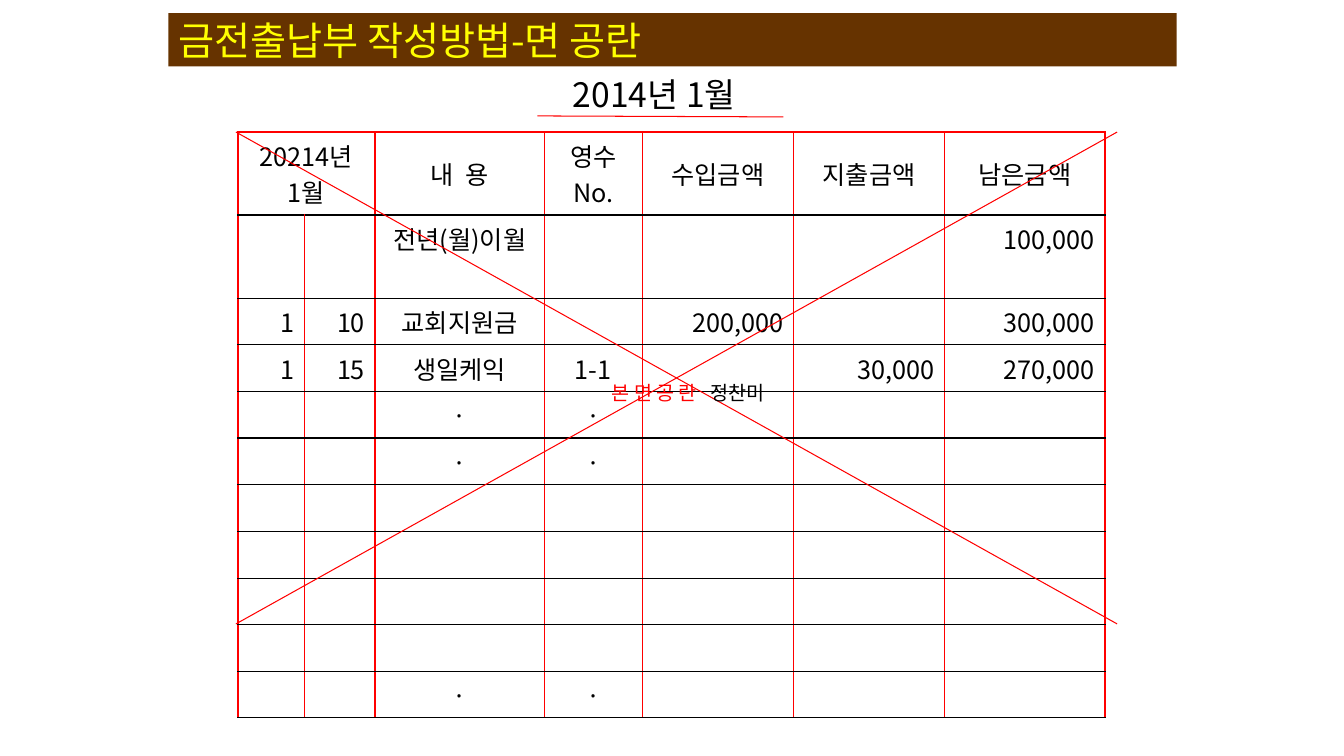
"""Build a cash book slide whose unused page is crossed out."""
import pptx
import pptx.util
import pptx.dml.color
import pptx.enum.shapes
import pptx.enum.text
import pptx.oxml.ns
import lxml.etree

FONT = "Noto Sans CJK KR"
COLORS = {"brown": "663300", "yellow": "FFFF00", "red": "FF0000", "black": "000000"}
TITLE = "금전출납부 작성방법-면 공란"
MONTH = "2014년 1월"
BLANK_NOTE = [("본 면 공 란   ", "red"), ("정찬미", "black")]
EMPTY = [""] * 7
DOTS = ["", "", "·", "·", "", "", ""]
LEDGER = [
    ["20214년\n1월", "", "내  용", "영수\nNo.", "수입금액", "지출금액", "남은금액"],
    ["", "", "전년(월)이월", "", "", "", "100,000"],
    ["1", "10", "교회지원금", "", "200,000", "", "300,000"],
    ["1", "15", "생일케익", "1-1", "", "30,000", "270,000"],
    DOTS, DOTS, EMPTY, EMPTY, EMPTY, EMPTY, DOTS,
]
COLUMNS = [0.66, 0.7, 1.68, 0.97, 1.5, 1.5, 1.59]
ROWS = [0.46] + [0.42] * 10
CENTERED = (2, 3)
LAST_BOLD_ROW = 5
TABLE_BOX = (2.36, 1.31, 8.62, 4.89)
LEFT, TOP, RIGHT, BOTTOM = 2.34, 1.31, 11.08, 6.19
LINES = [
    (5.33, 1.15, 7.77, 1.16),
    (LEFT, TOP, RIGHT, BOTTOM),
    (RIGHT, TOP, LEFT, BOTTOM),
]
ALIGN = pptx.enum.text.PP_ALIGN
MIDDLE = pptx.enum.text.MSO_ANCHOR.MIDDLE
qn = pptx.oxml.ns.qn


def inches(values):
    return [pptx.util.Inches(value) for value in values]


def rgb(color):
    return pptx.dml.color.RGBColor.from_string(COLORS[color])


def set_font(font, element, size, color):
    font.size = pptx.util.Pt(size)
    font.name = FONT
    font.color.rgb = rgb(color)
    latin = element.find(qn("a:latin"))
    east_asian = latin.makeelement(qn("a:ea"), {"typeface": FONT})
    latin.addnext(east_asian)


def format_para(para, size, color, align):
    para.alignment = align
    set_font(para.font, para.font._element, size, color)


def set_borders(cell, row):
    bold = row <= LAST_BOLD_ROW
    top = ("red" if row == 0 else "black", 1 if bold else 0.25)
    if row == LAST_BOLD_ROW + 1:
        top = ("black", 0.25)
    bottom = ("black", 1 if row < LAST_BOLD_ROW else 0.25)
    side = ("red", 1)
    properties = cell._tc.get_or_add_tcPr()
    edges = [("lnL", side), ("lnR", side), ("lnT", top), ("lnB", bottom)]
    for position, (tag, (color, width)) in enumerate(edges):
        line = lxml.etree.Element(qn("a:" + tag), w=str(pptx.util.Pt(width)))
        fill = lxml.etree.SubElement(line, qn("a:solidFill"))
        lxml.etree.SubElement(fill, qn("a:srgbClr"), val=COLORS[color])
        properties.insert(position, line)


def add_ledger(page):
    table = page.shapes.add_table(len(ROWS), len(COLUMNS), *inches(TABLE_BOX)).table
    table.first_row = table.horz_banding = False
    for column, width in zip(table.columns, inches(COLUMNS)):
        column.width = width
    for row, height in zip(table.rows, inches(ROWS)):
        row.height = height
    for row, texts in enumerate(LEDGER):
        for column, text in enumerate(texts):
            cell = table.cell(row, column)
            cell.text = text
            cell.fill.background()
            centered = row == 0 or column in CENTERED
            for para in cell.text_frame.paragraphs:
                format_para(para, 18, "black", ALIGN.CENTER if centered else ALIGN.RIGHT)
            if row == 0 and column > 1:
                cell.vertical_anchor = MIDDLE
            set_borders(cell, row)
    table.cell(0, 0).merge(table.cell(0, 1))


def add_text(page, place, spans, size):
    box = page.shapes.add_textbox(*inches(place))
    box.text_frame.word_wrap = True
    box.text_frame.auto_size = pptx.enum.text.MSO_AUTO_SIZE.SHAPE_TO_FIT_TEXT
    para = box.text_frame.paragraphs[0]
    para.alignment = ALIGN.CENTER
    for text, color in spans:
        span = para.add_run()
        span.text = text
        set_font(span.font, span.font._element, size, color)


def add_title(page):
    bar = page.shapes.add_shape(
        pptx.enum.shapes.MSO_SHAPE.RECTANGLE, *inches((1.67, 0.13, 10, 0.53)))
    bar.shadow.inherit = False
    bar.fill.solid()
    bar.fill.fore_color.rgb = rgb("brown")
    bar.line.fill.background()
    bar.text_frame.text = TITLE
    bar.text_frame.vertical_anchor = MIDDLE
    format_para(bar.text_frame.paragraphs[0], 28, "yellow", ALIGN.LEFT)


def add_line(page, ends):
    line = page.shapes.add_connector(
        pptx.enum.shapes.MSO_CONNECTOR.STRAIGHT, *inches(ends))
    line.line.color.rgb = rgb("red")
    line.line.width = pptx.util.Pt(0.75)
    lxml.etree.SubElement(line._element.spPr, qn("a:effectLst"))


def main():
    deck = pptx.Presentation()
    deck.slide_width, deck.slide_height = inches((13.33, 7.5))
    page = deck.slides.add_slide(deck.slide_layouts[6])
    add_title(page)
    add_ledger(page)
    add_text(page, (3.91, 0.68, 5.16, 0.5), [(MONTH, "black")], 24)
    for ends in LINES:
        add_line(page, ends)
    add_text(page, (4.62, 3.73, 4.41, 0.34), BLANK_NOTE, 14)
    deck.save("out.pptx")


if __name__ == "__main__":
    main()
